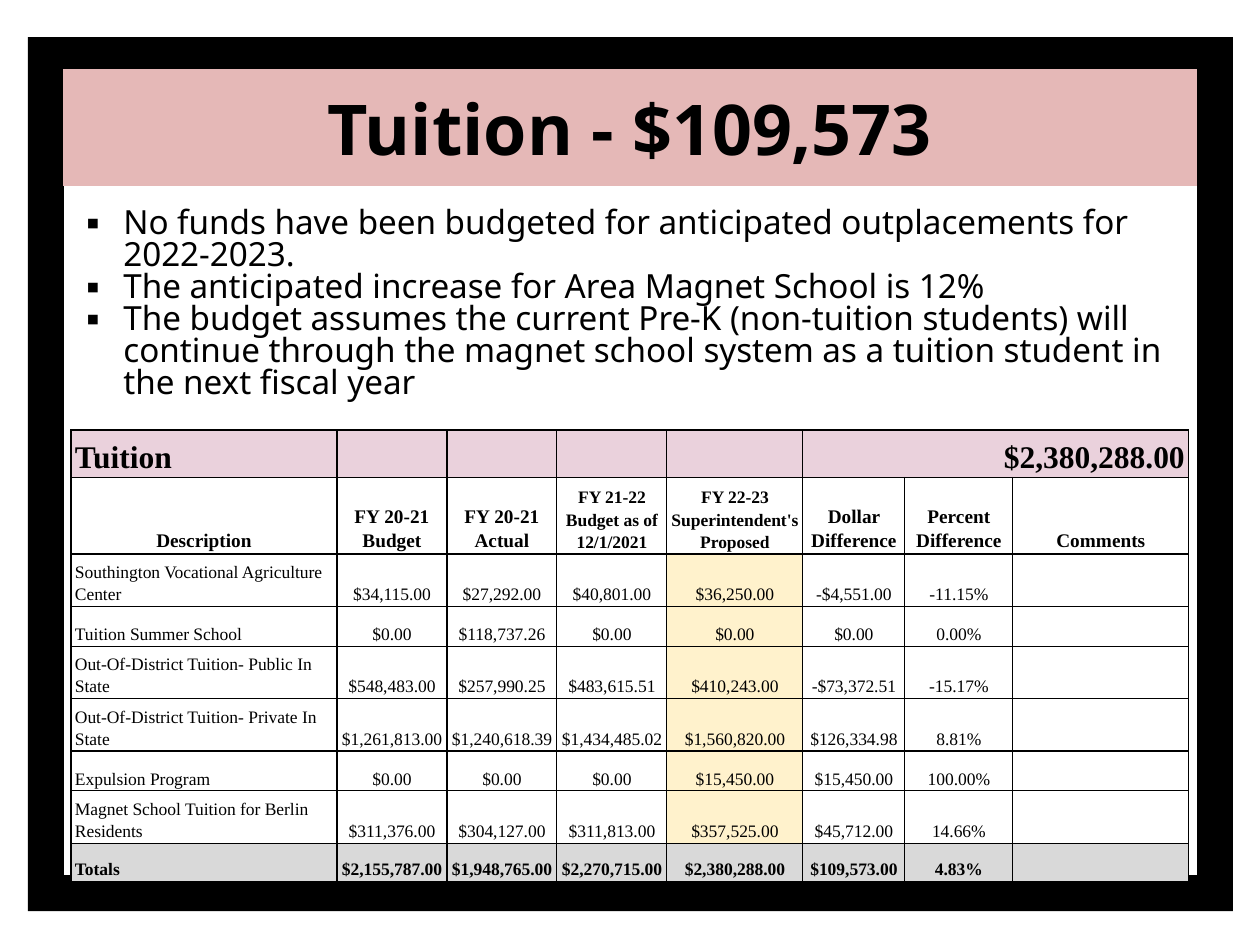
import pptx
import pptx.util
import pptx.dml.color
import pptx.enum.shapes
import pptx.enum.text
import pptx.oxml

RGBColor = pptx.dml.color.RGBColor
Align = pptx.enum.text.PP_ALIGN
Anchor = pptx.enum.text.MSO_ANCHOR
Pt = pptx.util.Pt

BLACK = RGBColor(0x00, 0x00, 0x00)
ROSE = RGBColor(0xE5, 0xB8, 0xB7)
PINK = RGBColor(0xEA, 0xD1, 0xDC)
CREAM = RGBColor(0xFF, 0xF2, 0xCC)
GREY = RGBColor(0xD9, 0xD9, 0xD9)
NAMESPACE = 'xmlns:a="http://schemas.openxmlformats.org/drawingml/2006/main"'


def px(count):
    """Turn px, 126 to the inch, into EMU."""
    return pptx.util.Emu(round(count * 914400 / 126))


def format_text(para, font_name, size, bold, spacing, align):
    para.alignment = align
    para.line_spacing = spacing
    for span in para.runs:
        span.font.name = font_name
        span.font.size = Pt(size)
        span.font.bold = bold
        span.font.color.rgb = BLACK


deck = pptx.Presentation()
deck.slide_width, deck.slide_height = px(1260), px(945)
page = deck.slides.add_slide(deck.slide_layouts[5])

# Black frame, behind the title
frame = page.shapes.add_shape(pptx.enum.shapes.MSO_SHAPE.FRAME,
                              px(28), px(37), px(1205), px(874))
frame.adjustments[0] = 0.041
frame.shadow.inherit = False
frame.fill.solid()
frame.fill.fore_color.rgb = BLACK
frame.line.fill.background()

title = page.shapes.title
frame._element.getparent().append(title._element)
title.left, title.top, title.width, title.height = px(63), px(69), px(1134), px(117)
title.fill.solid()
title.fill.fore_color.rgb = ROSE
title.text_frame.text = "Tuition - $109,573"
title.text_frame.vertical_anchor = Anchor.MIDDLE
format_text(title.text_frame.paragraphs[0], "Noto Sans", 40, True, 1.0, Align.CENTER)

# Bulleted notes
notes = page.shapes.add_textbox(px(63), px(203), px(1134), px(227))
notes.text_frame.word_wrap = True
notes.text_frame.text = "\n".join([
    "No funds have been budgeted for anticipated outplacements for 2022-2023.",
    "The anticipated increase for Area Magnet School is 12%",
    "The budget assumes the current Pre-K (non-tuition students) will continue "
    "through the magnet school system as a tuition student in the next fiscal year",
])
for para in notes.text_frame.paragraphs:
    format_text(para, "Noto Sans", 19, False, 0.8, Align.LEFT)
    properties = para._p.get_or_add_pPr()
    properties.set("marL", str(px(48)))
    properties.set("indent", str(-px(37)))
    for bullet in ('buFont %s typeface="Noto Sans"', 'buChar %s char="▪"'):
        properties.append(pptx.oxml.parse_xml("<a:" + bullet % NAMESPACE + "/>"))

# Tuition table
column_widths = [266, 110, 110, 110, 136, 102, 108, 176]
row_heights = [45, 72, 50, 40, 50, 50, 40, 50, 38]
rows = [
    ["Tuition", "", "", "", "", "$2,380,288.00", "", ""],
    ["Description", "FY 20-21\nBudget", "FY 20-21\nActual",
     "FY 21-22 Budget as of 12/1/2021", "FY 22-23 Superintendent's Proposed",
     "Dollar Difference", "Percent Difference", "Comments"],
    ["Southington Vocational Agriculture Center", "$34,115.00", "$27,292.00",
     "$40,801.00", "$36,250.00", "-$4,551.00", "-11.15%", ""],
    ["Tuition Summer School", "$0.00", "$118,737.26", "$0.00", "$0.00",
     "$0.00", "0.00%", ""],
    ["Out-Of-District Tuition- Public In State", "$548,483.00", "$257,990.25",
     "$483,615.51", "$410,243.00", "-$73,372.51", "-15.17%", ""],
    ["Out-Of-District Tuition- Private In State", "$1,261,813.00", "$1,240,618.39",
     "$1,434,485.02", "$1,560,820.00", "$126,334.98", "8.81%", ""],
    ["Expulsion Program", "$0.00", "$0.00", "$0.00", "$15,450.00",
     "$15,450.00", "100.00%", ""],
    ["Magnet School Tuition for Berlin Residents", "$311,376.00", "$304,127.00",
     "$311,813.00", "$357,525.00", "$45,712.00", "14.66%", ""],
    ["Totals", "$2,155,787.00", "$1,948,765.00", "$2,270,715.00",
     "$2,380,288.00", "$109,573.00", "4.83%", ""],
]
last_row = len(rows) - 1
table = page.shapes.add_table(len(rows), len(column_widths), px(71), px(430),
                              px(sum(column_widths)), px(sum(row_heights))).table
table.first_row = False
table.horz_banding = False
for column, width in zip(table.columns, column_widths):
    column.width = px(width)
for row, height in zip(table.rows, row_heights):
    row.height = px(height)
table.cell(0, 5).merge(table.cell(0, 7))

for r, texts in enumerate(rows):
    for c, text in enumerate(texts):
        cell = table.cell(r, c)
        cell.vertical_anchor = Anchor.BOTTOM
        cell.margin_left = cell.margin_right = px(4)
        cell.margin_top = cell.margin_bottom = px(2)

        if r == 0:
            size, align = 18, Align.RIGHT if c == 5 else Align.LEFT
        else:
            size = 11 if r == 1 and c not in (3, 4) else 10
            align = Align.LEFT if c == 0 and r > 1 else Align.CENTER
        cell.text_frame.text = text
        for para in cell.text_frame.paragraphs:
            format_text(para, "Times New Roman", size, r in (0, 1, last_row), 1.15, align)
            if not text:
                para._p.get_or_add_endParaRPr().set("sz", "1000")

        # Borders come before the fill in the cell properties
        cell_properties = cell._tc.get_or_add_tcPr()
        for side in ("lnL", "lnR", "lnT", "lnB"):
            cell_properties.append(pptx.oxml.parse_xml(
                f'<a:{side} {NAMESPACE} w="9525"><a:solidFill>'
                f'<a:srgbClr val="{BLACK}"/></a:solidFill></a:{side}>'))
        fill = {0: PINK, last_row: GREY}.get(r, CREAM if c == 4 and r > 1 else None)
        if fill is None:
            cell.fill.background()
        else:
            cell.fill.solid()
            cell.fill.fore_color.rgb = fill

deck.save("out.pptx")
